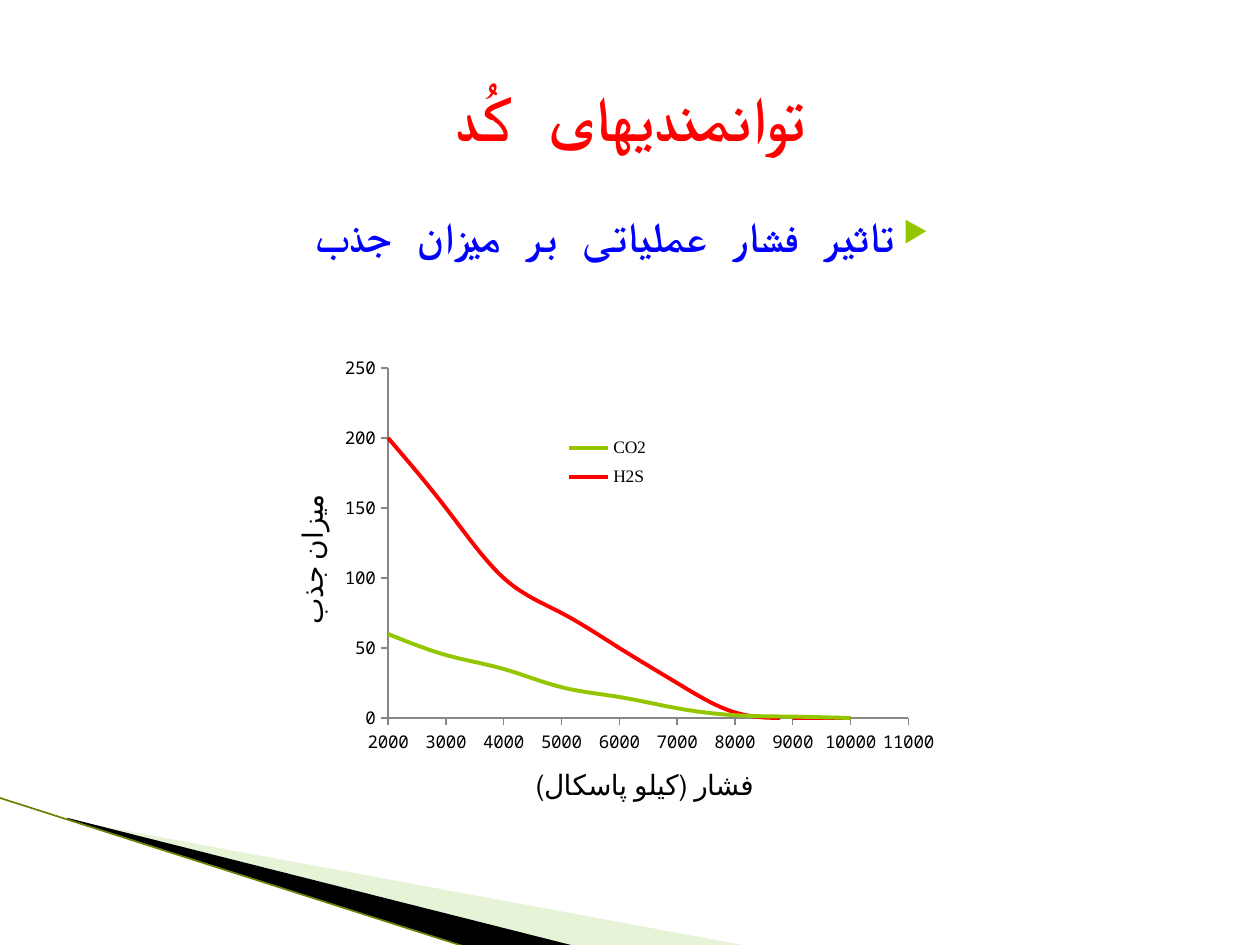
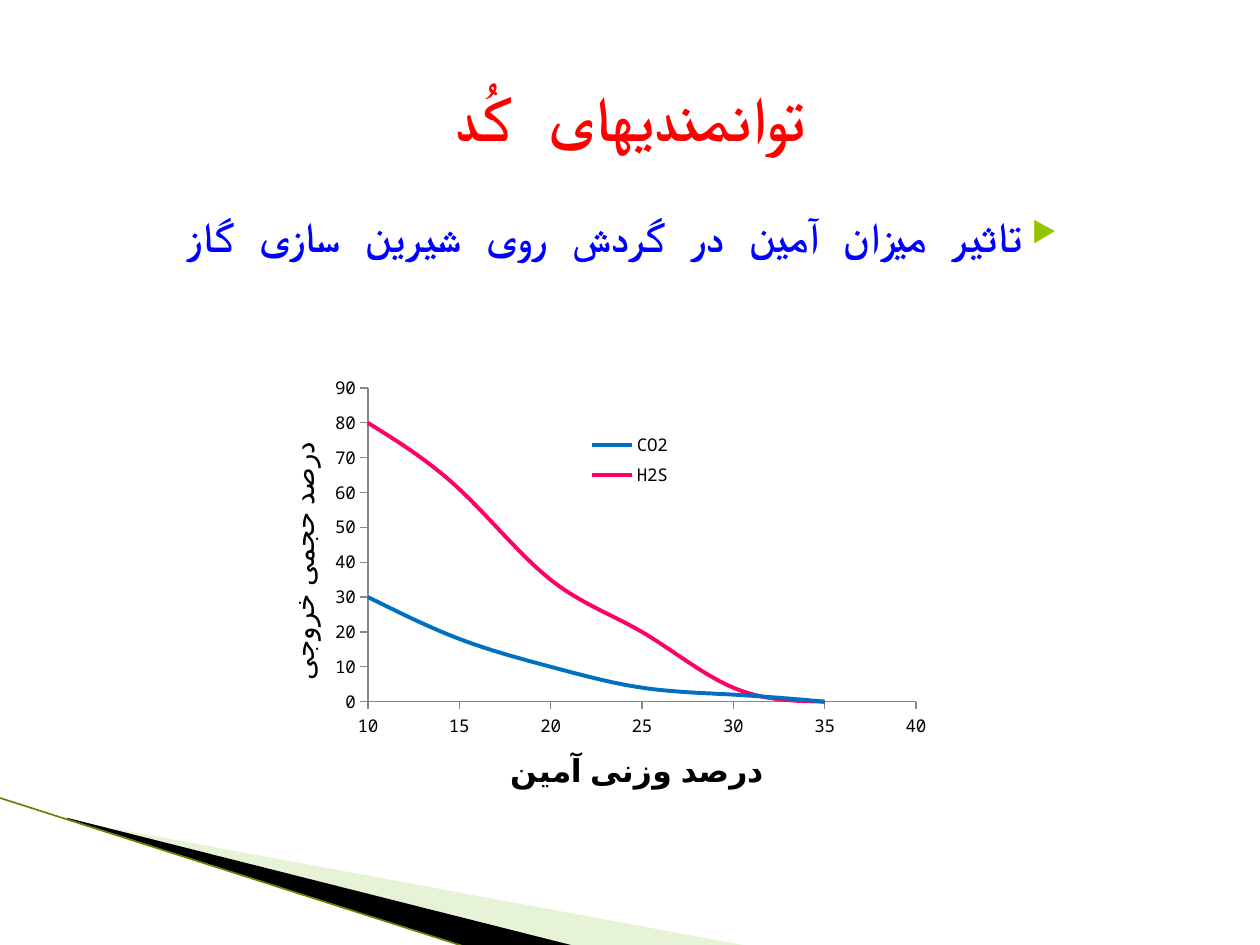
from pptx import Presentation
from pptx.chart.data import XyChartData
from pptx.dml.color import RGBColor
from pptx.enum.chart import XL_CHART_TYPE, XL_LEGEND_POSITION, XL_TICK_MARK
from pptx.enum.shapes import MSO_CONNECTOR
from pptx.enum.text import MSO_ANCHOR, PP_ALIGN
from pptx.oxml import parse_xml
from pptx.oxml.ns import nsdecls, qn
from pptx.util import Inches, Pt

SCATTER = XL_CHART_TYPE.XY_SCATTER_SMOOTH_NO_MARKERS
LEGEND_RIGHT = XL_LEGEND_POSITION.RIGHT
TICK_OUT = XL_TICK_MARK.OUTSIDE
TICK_NONE = XL_TICK_MARK.NONE
STRAIGHT = MSO_CONNECTOR.STRAIGHT
TOP, MIDDLE = MSO_ANCHOR.TOP, MSO_ANCHOR.MIDDLE
CENTER = PP_ALIGN.CENTER

FONT = "Noto Sans Mono"
RED, BLUE, GREEN, BLACK = "FF0000", "0000FF", "94C600", "000000"
PALE, OLIVE, GREY = "C3E19D", "698200", "868686"
TITLE = "توانمندیهای کُد"

SLIDES = [
    dict(
        bullet="تاثیر فشار عملیاتی بر میزان جذب",
        frame=(2.08, 2.75, 6.25, 3.83),
        plot=(3.08, 2.92, 4.13, 2.78),
        legend=(4.42, 3.4, 0.8, 0.54),
        legend_font="Times New Roman",
        x_axis=dict(text="فشار (کیلو پاسکال)", at=(4.21, 6.07), size=16,
                    bold=False, low=2000, high=11000, step=1000),
        y_axis=dict(text="میزان جذب", at=(2.32, 3.88), size=16,
                    bold=False, low=0, high=250, step=50),
        xs=range(2000, 10001, 1000),
        series=[("CO2", GREEN, [60, 45, 35, 22, 15, 7, 2, 1, 0]),
                ("H2S", RED, [200, 150, 100, 75, 50, 25, 4, 0, 0])],
    ),
    dict(
        bullet="تاثیر میزان آمین در گردش روی شیرین سازی گاز",
        frame=(2, 2.92, 6.25, 3.58),
        plot=(2.92, 3.08, 4.35, 2.49),
        legend=(4.6, 3.38, 0.8, 0.54),
        legend_font=FONT,
        x_axis=dict(text="درصد وزنی آمین", at=(4, 5.94), size=18,
                    bold=True, low=10, high=40, step=5),
        y_axis=dict(text="درصد حجمی خروجی", at=(2.25, 3.47), size=16,
                    bold=False, low=0, high=90, step=10),
        xs=range(10, 36, 5),
        series=[("CO2", "0070C0", [30, 18, 10, 4, 2, 0]),
                ("H2S", "FF0066", [80, 61, 35, 20, 4, 0])],
    ),
]


def rgb(value):
    """Turn a hex string into a colour."""
    return RGBColor.from_string(value)


def style_font(font, size, color=BLACK, bold=False, name=FONT):
    """Set size, colour, weight and typeface of a font."""
    font.size, font.bold, font.name = Pt(size), bold, name
    font.color.rgb = rgb(color)


def set_layout(parent, frame, rect, after=None, target=""):
    """Place a chart part at a rectangle in slide inches."""
    left, top, width, height = frame
    x, y = (rect[0] - left) / width, (rect[1] - top) / height
    values = [("x", x), ("y", y)]
    if len(rect) == 4:
        values += [("w", rect[2] / width), ("h", rect[3] / height)]
    parts = "".join(f'<c:{k} val="{v:.4f}"/>' for k, v in values)
    for old in parent.findall(qn("c:layout")):
        parent.remove(old)
    layout = parse_xml(
        f'<c:layout {nsdecls("c")}><c:manualLayout>{target}'
        f'<c:xMode val="edge"/><c:yMode val="edge"/>{parts}'
        '</c:manualLayout></c:layout>')
    if after:
        parent.find(qn(after)).addnext(layout)
    else:
        parent.insert(0, layout)


class Deck:
    """Hold the presentation, its style and the current slide."""

    def __init__(self):
        """Start an empty presentation."""
        self.prs = Presentation()
        self.prs.slide_width, self.prs.slide_height = Inches(10), Inches(7.5)

    def add_slide(self):
        """Add a blank slide with the corner wedges, edge line and title."""
        self.s = self.prs.slides.add_slide(self.prs.slide_layouts[6])
        self.wedge([(0.55, 6.51), (5.95, 7.51), (4.56, 7.51), (0.55, 6.5)], PALE, 40)
        self.wedge([(0.53, 6.49), (4.57, 7.51), (3.72, 7.52), (0.54, 6.5)], BLACK)
        self.line((-0.01, 6.33), (3.71, 7.52), OLIVE, 0.95)

    def wedge(self, points, color, opacity=100):
        """Draw a filled polygon without outline."""
        pts = [(Inches(x), Inches(y)) for x, y in points]
        builder = self.s.shapes.build_freeform(*pts[0], scale=1.0)
        builder.add_line_segments(pts[1:], close=True)
        sp = builder.convert_to_shape()
        sp.shadow.inherit = False
        sp.line.fill.background()
        sp.fill.solid()
        sp.fill.fore_color.rgb = rgb(color)
        if opacity < 100:
            clr = sp.fill._xPr.find(qn("a:solidFill"))[0]
            clr.append(parse_xml(f'<a:alpha {nsdecls("a")} val="{opacity * 1000}"/>'))

    def line(self, start, end, color, width):
        """Draw a straight line."""
        sp = self.s.shapes.add_connector(STRAIGHT, *map(Inches, start + end))
        sp.line.color.rgb = rgb(color)
        sp.line.width = Pt(width)
        sp._element.spPr.append(parse_xml(f'<a:effectLst {nsdecls("a")}/>'))

    def text(self, rect, text, size, color, anchor):
        """Add a centred bold text box and return its paragraph."""
        tf = self.s.shapes.add_textbox(*map(Inches, rect)).text_frame
        tf.word_wrap = True
        tf.vertical_anchor = anchor
        p = tf.paragraphs[0]
        p.text = text
        p.alignment = CENTER
        r = p.runs[0]
        style_font(r.font, size, color, True)
        r.font._element.append(parse_xml(f'<a:cs {nsdecls("a")} typeface="{FONT}"/>'))
        return p

    def bullet(self, text):
        """Add the right-to-left line with a triangle bullet."""
        p = self.text((0.5, 1.62, 9, 4.95), text, 24, BLUE, TOP)
        pPr = p._p.get_or_add_pPr()
        pPr.set("marL", str(Inches(0.4)))
        pPr.set("indent", str(Inches(-0.28)))
        pPr.set("rtl", "1")
        for xml in (f'<a:buClr {nsdecls("a")}><a:srgbClr val="{GREEN}"/></a:buClr>',
                    f'<a:buSzPct {nsdecls("a")} val="68000"/>',
                    f'<a:buChar {nsdecls("a")} char="▶"/>'):
            pPr.append(parse_xml(xml))

    def axis(self, axis, frame, text, at, size, bold, low, high, step):
        """Scale, style and title one chart axis."""
        axis.minimum_scale, axis.maximum_scale = low, high
        axis.major_unit = step
        axis.has_major_gridlines = False
        axis.major_tick_mark, axis.minor_tick_mark = TICK_OUT, TICK_NONE
        axis.format.line.color.rgb = rgb(GREY)
        axis.format.line.width = Pt(0.75)
        axis.tick_labels.number_format = "General"
        axis.tick_labels.number_format_is_linked = False
        title = axis.axis_title
        p = title.text_frame.paragraphs[0]
        p.text = text
        style_font(p.runs[0].font, size, bold=bold)
        set_layout(title._element, frame, at, "c:tx")
        return title

    def chart(self, frame, plot, legend, legend_font, x_axis, y_axis, xs, series):
        """Add a smooth scatter chart with placed plot, legend and titles."""
        data = XyChartData()
        for name, _, ys in series:
            ser = data.add_series(name)
            for x, y in zip(xs, ys):
                ser.add_data_point(x, y)
        chart = self.s.shapes.add_chart(SCATTER, *map(Inches, frame), data).chart
        style_font(chart.font, 10)
        chart.has_title = False
        chart.plots[0].vary_by_categories = False
        for ser, (_, color, _) in zip(chart.plots[0].series, series):
            ser.format.line.color.rgb = rgb(color)
            ser.format.line.width = Pt(2.25)
            for smooth in ser._element.findall(qn("c:smooth")):
                smooth.set("val", "1")
        self.axis(chart.category_axis, frame, **x_axis)
        title = self.axis(chart.value_axis, frame, **y_axis)
        body = title.text_frame._txBody.find(qn("a:bodyPr"))
        body.set("rot", "-5400000")
        body.set("vert", "horz")
        chart.has_legend = True
        chart.legend.position = LEGEND_RIGHT
        chart.legend.include_in_layout = False
        style_font(chart.legend.font, 10, name=legend_font)
        set_layout(chart.legend._element, frame, legend, "c:legendPos")
        area = chart._chartSpace.find(qn("c:chart")).find(qn("c:plotArea"))
        set_layout(area, frame, plot, target='<c:layoutTarget val="inner"/>')


def main():
    """Build both slides and save them."""
    deck = Deck()
    for content in SLIDES:
        deck.add_slide()
        deck.bullet(content["bullet"])
        deck.text((0.5, 0.3, 9, 1.25), TITLE, 36, RED, MIDDLE)
        deck.chart(**{k: v for k, v in content.items() if k != "bullet"})
    deck.prs.save("out.pptx")


if __name__ == "__main__":
    main()
